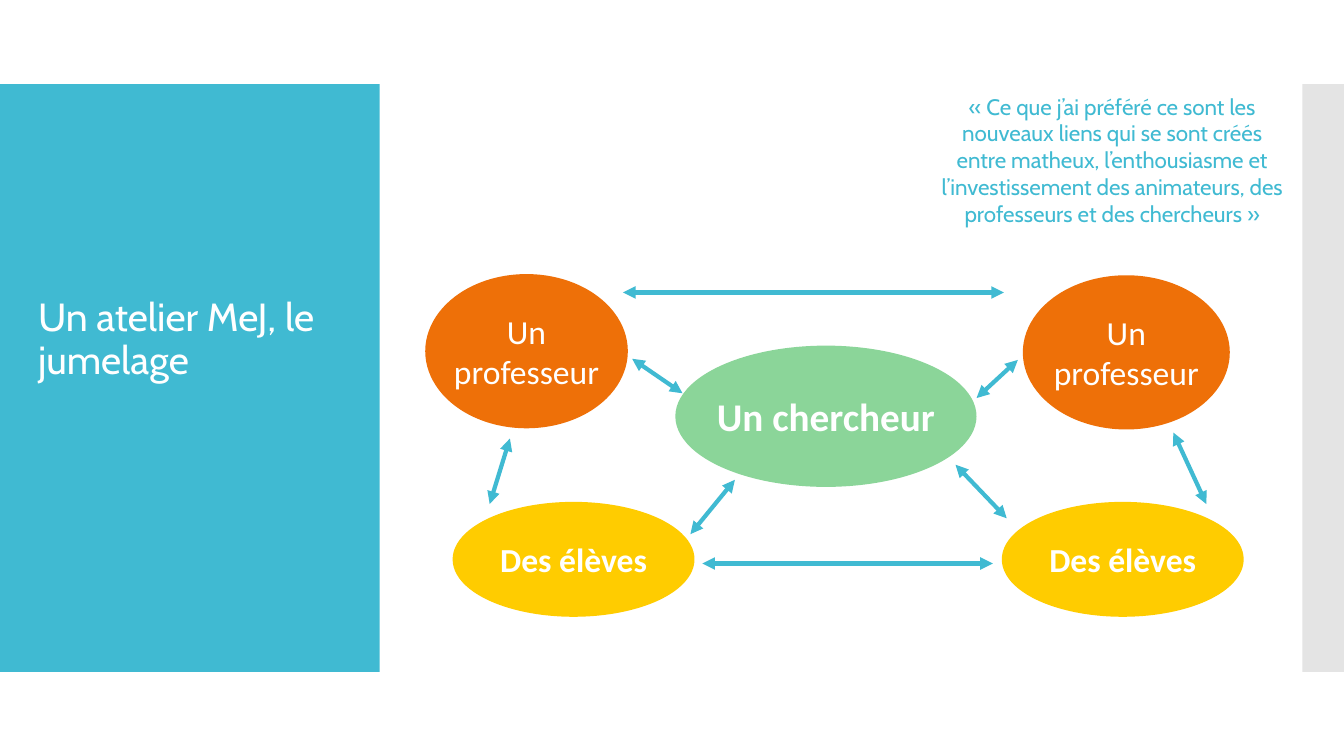
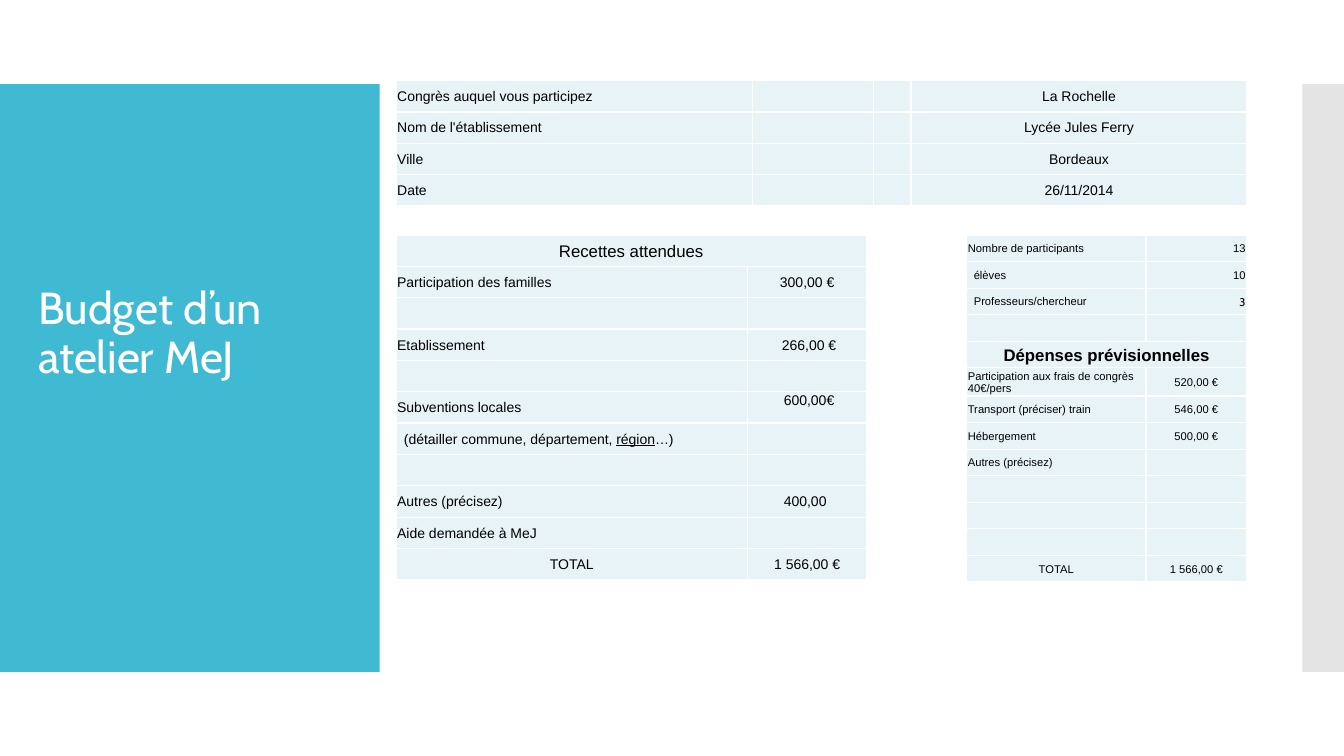
from dataclasses import dataclass

from lxml.etree import SubElement
from pptx import Presentation
from pptx.dml.color import RGBColor
from pptx.enum.shapes import MSO_CONNECTOR, MSO_SHAPE
from pptx.enum.text import MSO_ANCHOR, PP_ALIGN
from pptx.oxml import parse_xml
from pptx.oxml.ns import nsdecls, qn
from pptx.util import Cm, Pt


@dataclass(frozen=True)
class Theme:
    teal: str = "40BAD2"
    grey: str = "E4E4E4"
    orange: str = "EE7008"
    yellow: str = "FFCC00"
    green: str = "8BD599"
    pale: str = "E8F3F7"
    white: str = "FFFFFF"
    black: str = "000000"
    heading_font: str = "Cabin"
    diagram_font: str = "Calibri"
    table_font: str = "Arial"
    title: int = 32
    long_title: int = 28
    quote: int = 16
    centre_role: int = 28
    role: int = 24
    table_heading: int = 12
    table_text: int = 10
    small_table_text: int = 8
    stroke: int = 3
    border: int = 1


THEME = Theme()
LEFT, CENTRE, RIGHT = PP_ALIGN.LEFT, PP_ALIGN.CENTER, PP_ALIGN.RIGHT


def rgb(colour):
    return RGBColor.from_string(colour)


def write_text(frame, text, *, size, font, colour, bold=False, align=LEFT,
               spacing=None, underlined=None):
    for index, line in enumerate(text.split("\n")):
        paragraph = frame.paragraphs[0] if index == 0 else frame.add_paragraph()
        paragraph.alignment = align
        if spacing:
            paragraph.line_spacing = spacing
        if not line:
            SubElement(paragraph._p, qn("a:endParaRPr"), sz=str(size * 100))
            continue
        pieces = line.partition(underlined) if underlined else (line,)
        for piece in filter(None, pieces):
            run = paragraph.add_run()
            run.text = piece
            run.font.size = Pt(size)
            run.font.name = font
            run.font.bold = bold
            run.font.color.rgb = rgb(colour)
            if piece == underlined:
                run.font.underline = True


def add_text(slide, box, text, *, anchor=MSO_ANCHOR.TOP, **text_format):
    frame = slide.shapes.add_textbox(*map(Cm, box)).text_frame
    frame.word_wrap = True
    frame.vertical_anchor = anchor
    write_text(frame, text, **text_format)


def add_filled(slide, kind, box, colour, outlined=False):
    shape = slide.shapes.add_shape(kind, *map(Cm, box))
    shape.shadow.inherit = False
    shape.fill.solid()
    shape.fill.fore_color.rgb = rgb(colour)
    if outlined:
        shape.line.color.rgb = rgb(colour)
        shape.line.width = Pt(THEME.stroke)
    else:
        shape.line.fill.background()
    return shape


def add_framed_slide(deck, title, title_size):
    slide = deck.slides.add_slide(deck.slide_layouts[6])
    top, height = 2.12, 14.81
    add_filled(slide, MSO_SHAPE.RECTANGLE, (0, top, 9.57, height), THEME.teal)
    add_filled(slide, MSO_SHAPE.RECTANGLE, (32.82, top, 1.05, height), THEME.grey)
    add_text(slide, (0.71, 3.17, 7.87, 6.6), title, anchor=MSO_ANCHOR.BOTTOM,
             size=title_size, font=THEME.heading_font, colour=THEME.white,
             spacing=0.9)
    return slide


def add_role(slide, box, text, colour, *, size=THEME.role, bold=True, outlined=True):
    role = add_filled(slide, MSO_SHAPE.OVAL, box, colour, outlined)
    role.text_frame.word_wrap = False
    role.text_frame.vertical_anchor = MSO_ANCHOR.MIDDLE
    write_text(role.text_frame, text, size=size, font=THEME.diagram_font,
               colour=THEME.white, bold=bold, align=CENTRE)


def add_exchange(slide, start, end):
    arrow = slide.shapes.add_connector(
        MSO_CONNECTOR.STRAIGHT, *map(Cm, (*start, *end)))
    arrow.line.color.rgb = rgb(THEME.teal)
    arrow.line.width = Pt(THEME.stroke)
    outline = arrow.line._get_or_add_ln()
    for end_tag in ("a:headEnd", "a:tailEnd"):
        SubElement(outline, qn(end_tag), type="triangle")
    SubElement(arrow._element.spPr, qn("a:effectLst"))


def add_pairing(slide, left, top):
    def at(x, y):
        return left + x, top + y

    add_role(slide, (*at(6.32, 1.81), 7.59, 3.56), "Un chercheur", THEME.green,
             size=THEME.centre_role, outlined=False)
    for x, y, width in ((0.07, 0.06, 5), (15.13, 0.09, 5.11)):
        add_role(slide, (*at(x, y), width, 3.78), "Un\nprofesseur",
                 THEME.orange, bold=False)
    for x in (0.76, 14.6):
        add_role(slide, (*at(x, 5.8), 5.99, 2.79), "Des élèves", THEME.yellow)
    exchanges = (
        ((5.23, 2.14), (6.5, 3.01)),
        ((14.67, 6.16), (13.38, 4.81)),
        ((14.95, 2.17), (13.91, 3.13)),
        ((19.7, 5.8), (18.87, 4)),
        ((5, 0.47), (14.6, 0.47)),
        ((1.64, 5.8), (2.15, 4.15)),
        ((6.7, 6.56), (7.82, 5.19)),
        ((7, 7.3), (14.32, 7.3)),
    )
    for start, end in exchanges:
        add_exchange(slide, at(*start), at(*end))


def style_cell(cell, indent, anchor):
    cell.margin_left = Cm(indent)
    cell.margin_top = cell.margin_right = Cm(0.03)
    cell.margin_bottom = 0
    cell.vertical_anchor = anchor
    cell.fill.solid()
    cell.fill.fore_color.rgb = rgb(THEME.pale)
    properties = cell._tc.get_or_add_tcPr()
    for index, side in enumerate("LRTB"):
        properties.insert(index, parse_xml(
            f'<a:ln{side} {nsdecls("a")} w="{Pt(THEME.border)}"><a:solidFill>'
            f'<a:srgbClr val="{THEME.white}"/></a:solidFill></a:ln{side}>'))


def add_budget_table(slide, left, top, widths, row_height, rows, size):
    table = slide.shapes.add_table(
        len(rows), len(widths), Cm(left), Cm(top),
        Cm(sum(widths)), Cm(row_height * len(rows))).table
    table.first_row = table.horz_banding = False
    for column, width in zip(table.columns, widths):
        column.width = Cm(width)
    for row_index, entries in enumerate(rows):
        table.rows[row_index].height = Cm(row_height)
        for column_index in range(len(widths)):
            entry = entries[column_index] if column_index < len(entries) else ""
            options = dict(entry) if isinstance(entry, dict) else {"text": entry}
            cell = table.cell(row_index, column_index)
            style_cell(cell, options.pop("indent", 0.03),
                       options.pop("anchor", MSO_ANCHOR.MIDDLE))
            defaults = {"size": size, "font": THEME.table_font,
                        "colour": THEME.black,
                        "align": CENTRE if column_index else LEFT}
            write_text(cell.text_frame, **(defaults | options))
        if len(entries) == 1:
            table.cell(row_index, 0).merge(table.cell(row_index, len(widths) - 1))


def heading(text, bold=False):
    return ({"text": text, "size": THEME.table_heading, "bold": bold,
             "align": CENTRE},)


def total(amount):
    return {"text": "TOTAL", "align": CENTRE}, amount


def headcount(label, count, indent=0.03, font=THEME.table_font):
    return ({"text": label, "indent": indent},
            {"text": count, "align": RIGHT, "font": font})


def build_pairing_slide(deck):
    slide = add_framed_slide(deck, "Un atelier MeJ, le jumelage", THEME.long_title)
    add_text(slide, (23.47, 2.21, 9.12, 4.45),
             "« Ce que j’ai préféré ce sont les nouveaux liens qui se sont créés "
             "entre matheux, l’enthousiasme et l’investissement des animateurs, "
             "des professeurs et des chercheurs »",
             size=THEME.quote, font=THEME.heading_font, colour=THEME.teal,
             align=CENTRE)
    add_pairing(slide, 10.7, 6.9)


def build_budget_slide(deck):
    slide = add_framed_slide(deck, "Budget d’un atelier MeJ", THEME.title)
    blank = ("", "")
    identity = (
        ("Congrès auquel vous participez", "", "", "La Rochelle"),
        ("Nom de l'établissement", "", "", "Lycée Jules Ferry"),
        ("Ville", "", "", "Bordeaux"),
        ("Date", "", "", "26/11/2014"),
    )
    income = (
        heading("Recettes attendues"),
        ("Participation des familles", "300,00 €"),
        blank,
        ("Etablissement", " 266,00 €"),
        blank,
        ("Subventions locales", {"text": " 600,00€", "anchor": MSO_ANCHOR.TOP}),
        ({"text": "(détailler commune, département, région…)",
          "underlined": "région", "indent": 0.2}, ""),
        blank,
        ("Autres (précisez)", "400,00 "),
        ("Aide demandée à MeJ", ""),
        total("1 566,00 €"),
    )
    expenses = (
        headcount("Nombre de participants", "13"),
        headcount("élèves", "10", indent=0.18),
        headcount("Professeurs/chercheur", "3", indent=0.18,
                  font=THEME.heading_font),
        blank,
        heading("Dépenses prévisionnelles", bold=True),
        ("Participation aux frais de congrès\n40€/pers", "520,00 €"),
        ("Transport (préciser) train", "546,00 €"),
        ("Hébergement", "500,00 €"),
        ("Autres (précisez)", ""),
        blank,
        blank,
        blank,
        total("1 566,00 €"),
    )
    left, lower_top = 9.98, 5.92
    add_budget_table(slide, left, 2.03, (8.99, 3.05, 0.94, 8.46), 0.79,
                     identity, THEME.table_text)
    add_budget_table(slide, 24.36, lower_top, (4.52, 2.54), 0.67,
                     expenses, THEME.small_table_text)
    add_budget_table(slide, left, lower_top, (8.86, 3), 0.79,
                     income, THEME.table_text)


def main():
    deck = Presentation()
    deck.slide_width, deck.slide_height = Cm(33.87), Cm(19.05)
    build_pairing_slide(deck)
    build_budget_slide(deck)
    deck.save("out.pptx")


if __name__ == "__main__":
    main()
